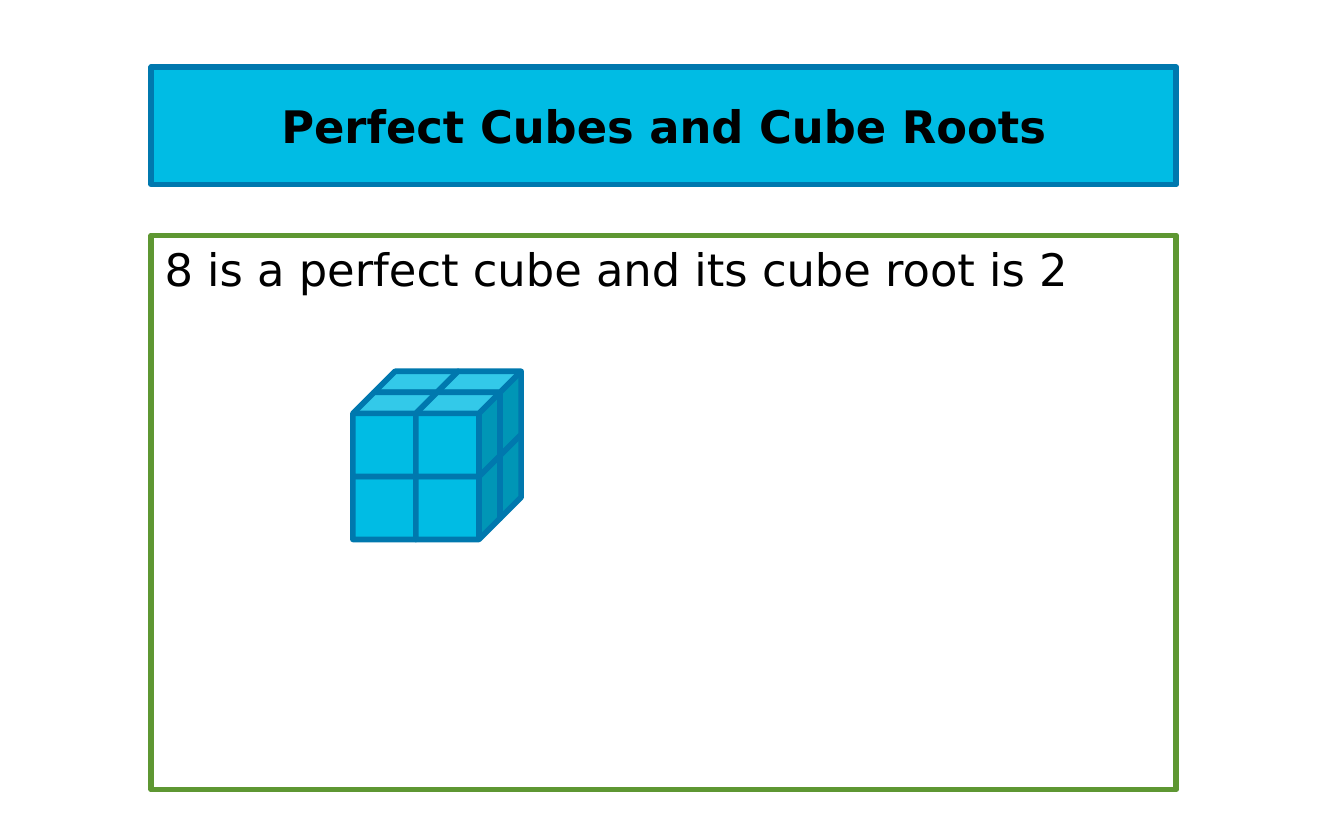
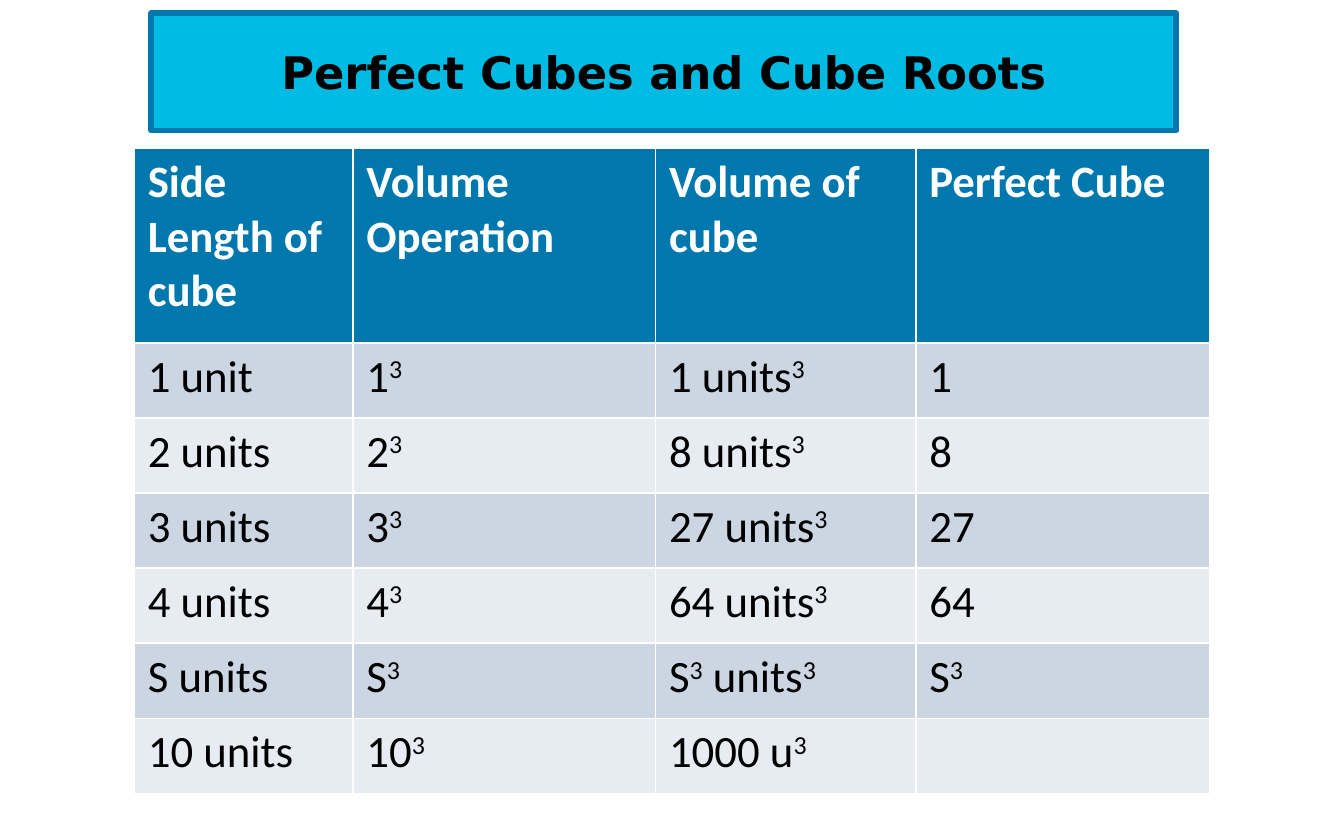
import pptx
import pptx.util
import pptx.dml.color
import pptx.enum.shapes
import pptx.enum.text

Cm, Pt = pptx.util.Cm, pptx.util.Pt
SHAPE = pptx.enum.shapes.MSO_SHAPE
ALIGN = pptx.enum.text.PP_ALIGN
ANCHOR = pptx.enum.text.MSO_ANCHOR

TITLE = "Perfect Cubes and Cube Roots"
FACT = "8 is a perfect cube and its cube root is 2"
HEAD = ["Side Length of cube", "Volume Operation", "Volume of cube", "Perfect Cube"]
ROWS = [
    ["1 unit", "1³", "1 units³", "1"],
    ["2 units", "2³", "8 units³", "8"],
    ["3 units", "3³", "27 units³", "27"],
    ["4 units", "4³", "64 units³", "64"],
    ["S units", "S³", "S³ units³", "S³"],
    ["10 units", "10³", "1000 u³", ""],
]

COLORS = {
    "cyan": "00BCE4", "blue": "0078AE", "green": "5E9732",
    "black": "000000", "white": "FFFFFF",
    "dark band": "CCD6E3", "light band": "E7ECF2",
}
FONT, CELL_FONT = "DejaVu Sans", "Calibri"
LEFT, WIDTH = 2.86, 19.37

SIDE = 2                           # unit cubes along each edge
CUBE, STEP, DEPTH = 1.59, 1.19, 0.4
CUBE_X, CUBE_Y = 6.67, 7.42        # front top left unit cube

COLS = [4.13, 5.72, 4.92, 5.55]
HEAD_H, ROW_H = 3.68, 1.42


def color(name):
    return pptx.dml.color.RGBColor.from_string(COLORS[name])


def style(para, face, ink, bold):
    font = para.font
    font.name, font.size, font.bold = face, Pt(24), bold
    font.color.rgb = color(ink)


def draw(slide, kind, box, line, fill=None):
    shape = slide.shapes.add_shape(kind, *map(Cm, box))
    shape.shadow.inherit = False
    if fill:
        shape.fill.solid()
        shape.fill.fore_color.rgb = color(fill)
    else:
        shape.fill.background()
    shape.line.color.rgb = color(line)
    shape.line.width = Pt(3)
    return shape


def write(shape, text, align, anchor, bold):
    frame = shape.text_frame
    frame.word_wrap = True
    frame.vertical_anchor = anchor
    para = frame.paragraphs[0]
    para.text, para.alignment = text, align
    style(para, FONT, "black", bold)


def add_title(slide, top):
    band = draw(slide, SHAPE.RECTANGLE, (LEFT, top, WIDTH, 2.22), "blue", "cyan")
    write(band, TITLE, ALIGN.CENTER, ANCHOR.MIDDLE, True)


def add_cubes(slide):
    """Stack unit cubes from back to front, bottom to top, left to right."""
    for back in reversed(range(SIDE)):
        for row in reversed(range(SIDE)):
            for col in range(SIDE):
                x = CUBE_X + col * STEP + back * DEPTH
                y = CUBE_Y + row * STEP - back * DEPTH
                draw(slide, SHAPE.CUBE, (x, y, CUBE, CUBE), "blue", "cyan")


def fill_cell(cell, text, fill, ink, bold):
    """Write the text, with each ³ as a raised 3."""
    cell.fill.solid()
    cell.fill.fore_color.rgb = color(fill)
    para = cell.text_frame.paragraphs[0]
    style(para, CELL_FONT, ink, bold)
    for i, part in enumerate(text.split("³")):
        if i:
            power = para.add_run()
            power.text = "3"
            power._r.get_or_add_rPr().set("baseline", "30000")
        if part:
            para.add_run().text = part


def add_grid(slide):
    lines = [HEAD] + ROWS
    high = [HEAD_H] + [ROW_H] * len(ROWS)
    table = slide.shapes.add_table(
        len(lines), len(COLS), Cm(2.54), Cm(2.8), Cm(sum(COLS)), Cm(sum(high))).table
    for col, wide in zip(table.columns, COLS):
        col.width = Cm(wide)
    for r, line in enumerate(lines):
        table.rows[r].height = Cm(high[r])
        band = "dark band" if r % 2 else "light band"
        look = (band, "black", False) if r else ("blue", "white", True)
        for c, text in enumerate(line):
            fill_cell(table.cell(r, c), text, *look)


def main():
    deck = pptx.Presentation()
    deck.slide_width, deck.slide_height = Cm(25.4), Cm(15.88)
    blank = deck.slide_layouts[6]

    slide = deck.slides.add_slide(blank)
    frame = draw(slide, SHAPE.RECTANGLE, (LEFT, 4.45, WIDTH, 10.48), "green")
    write(frame, FACT, ALIGN.LEFT, ANCHOR.TOP, False)
    add_title(slide, 1.27)
    add_cubes(slide)

    slide = deck.slides.add_slide(blank)
    add_title(slide, 0.25)
    add_grid(slide)

    deck.save("out.pptx")


if __name__ == "__main__":
    main()
